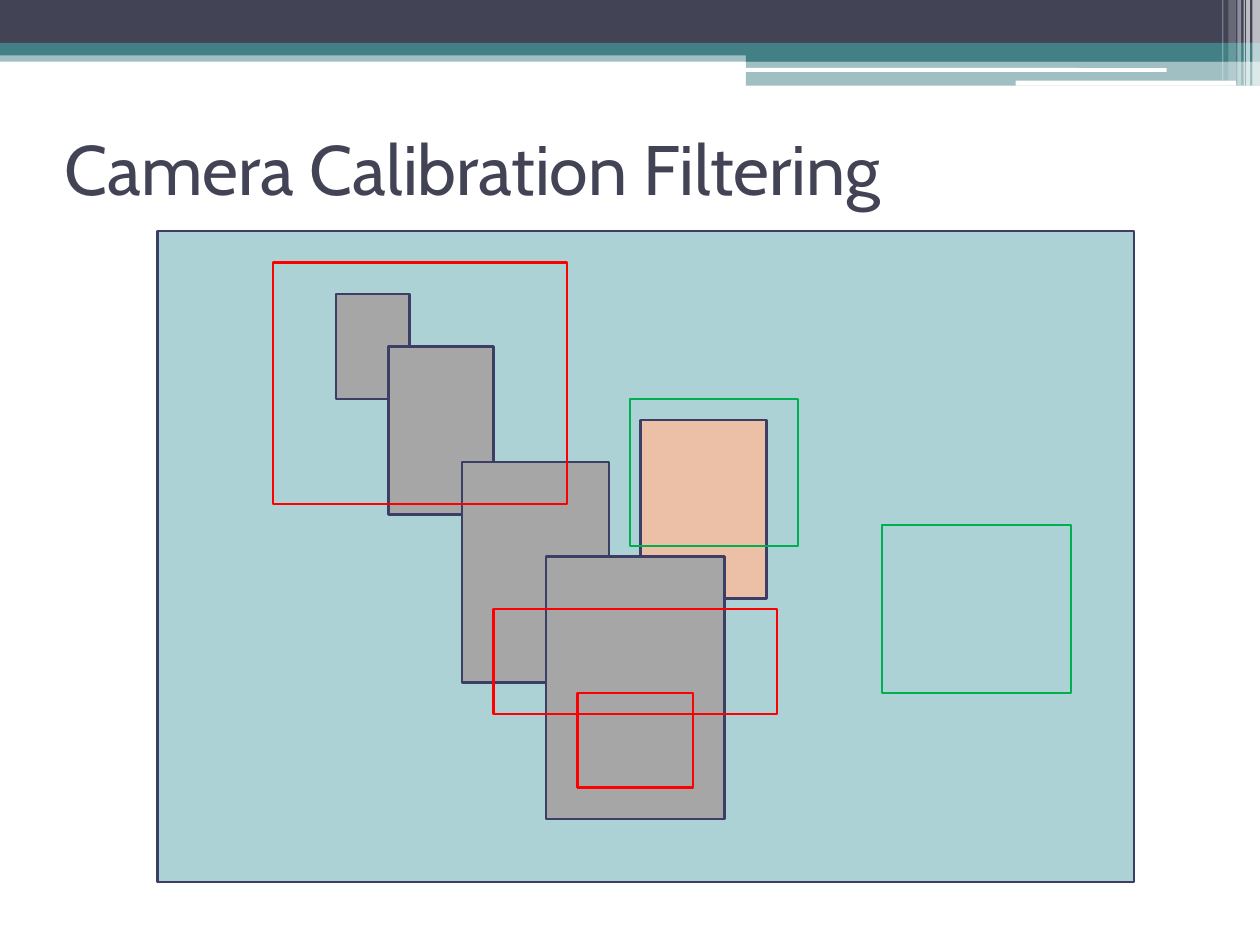
"""Build the camera calibration filtering slide."""
from dataclasses import dataclass
from typing import Iterable, Optional

from lxml.etree import SubElement
from pptx import Presentation
from pptx.dml.color import RGBColor
from pptx.enum.shapes import MSO_SHAPE
from pptx.enum.text import MSO_ANCHOR
from pptx.oxml.ns import qn
from pptx.util import Inches, Pt


@dataclass(frozen=True)
class Theme:
    font: str = "Cabin"
    title_size: int = 40
    line_width: float = 1.5
    dark: str = "424456"
    teal: str = "438086"
    white: str = "FFFFFF"
    scene: str = "ADD2D6"
    outline: str = "3D3E66"
    gray: str = "A6A6A6"
    peach: str = "EBC0A7"
    red: str = "FF0000"
    green: str = "00B050"


@dataclass(frozen=True)
class Grid:
    per_inch: int

    def place(self, *cells: int) -> list[int]:
        return [Inches(n / self.per_inch) for n in cells]


@dataclass(frozen=True)
class Box:
    col: int
    row: int
    cols: int
    rows: int
    fill: Optional[str] = None
    line: Optional[str] = None
    alpha: int = 100
    rounded: bool = False


THEME = Theme()
BANNER_GRID = Grid(100)
SCENE_GRID = Grid(12)

BANNER = [
    Box(0, 40, 1000, 9, THEME.teal, alpha=50),
    Box(0, 0, 1000, 34, THEME.dark),
    Box(0, 34, 1000, 10, THEME.teal),
    Box(592, 39, 408, 10, THEME.teal),
    Box(592, 48, 408, 20, THEME.teal, alpha=50),
    Box(591, 54, 335, 3, THEME.white, rounded=True),
    Box(806, 64, 175, 4, THEME.white, rounded=True),
]
STRIPES = [
    Box(col, 0, cols, rows, THEME.white, alpha=alpha)
    for col, cols, rows, alpha in [
        (994, 6, 68, 65), (989, 3, 68, 65), (987, 1, 68, 60),
        (982, 3, 68, 40), (975, 6, 64, 20), (970, 1, 64, 30),
    ]
]
SCENE = Box(15, 22, 93, 62, THEME.scene, THEME.outline)
OBJECTS = [
    Box(*cells, fill, THEME.outline)
    for cells, fill in [
        ((32, 28, 7, 10), THEME.gray),
        ((37, 33, 10, 16), THEME.gray),
        ((44, 44, 14, 21), THEME.gray),
        ((61, 40, 12, 17), THEME.peach),
        ((52, 53, 17, 25), THEME.gray),
    ]
]
DETECTIONS = [
    Box(26, 25, 28, 23, line=THEME.red),
    Box(47, 58, 27, 10, line=THEME.red),
    Box(60, 38, 16, 14, line=THEME.green),
    Box(84, 50, 18, 16, line=THEME.green),
    Box(55, 66, 11, 9, line=THEME.red),
]


def draw_boxes(s, grid: Grid, boxes: Iterable[Box]) -> None:
    """Draw boxes from back to front on a grid."""
    for box in boxes:
        kind = MSO_SHAPE.ROUNDED_RECTANGLE if box.rounded else MSO_SHAPE.RECTANGLE
        sp = s.shapes.add_shape(kind, *grid.place(box.col, box.row, box.cols, box.rows))
        sp.shadow.inherit = False
        if box.fill:
            sp.fill.solid()
            sp.fill.fore_color.rgb = RGBColor.from_string(box.fill)
        else:
            sp.fill.background()
        if box.alpha < 100:
            color = sp._element.spPr.find(qn("a:solidFill"))[0]
            SubElement(color, qn("a:alpha"), val=str(box.alpha * 1000))
        if box.line:
            sp.line.color.rgb = RGBColor.from_string(box.line)
            sp.line.width = Pt(THEME.line_width)
        else:
            sp.line.fill.background()


def add_text(s, text: str, *, at: list[int], size: int, color: str, font: str) -> None:
    """Add a wrapped, vertically centred line of text."""
    tf = s.shapes.add_textbox(*at).text_frame
    tf.word_wrap = True
    tf.vertical_anchor = MSO_ANCHOR.MIDDLE
    r = tf.paragraphs[0].add_run()
    r.text = text
    r.font.size = Pt(size)
    r.font.name = font
    r.font.color.rgb = RGBColor.from_string(color)


def main() -> None:
    """Build and save the slide."""
    prs = Presentation()
    prs.slide_width, prs.slide_height = Inches(10), Inches(7.5)
    s = prs.slides.add_slide(prs.slide_layouts[6])
    draw_boxes(s, BANNER_GRID, BANNER + STRIPES)
    draw_boxes(s, SCENE_GRID, [SCENE])
    add_text(s, "Camera Calibration Filtering", at=SCENE_GRID.place(5, 9, 108, 14),
             size=THEME.title_size, color=THEME.dark, font=THEME.font)
    draw_boxes(s, SCENE_GRID, OBJECTS + DETECTIONS)
    prs.save("out.pptx")


if __name__ == "__main__":
    main()
